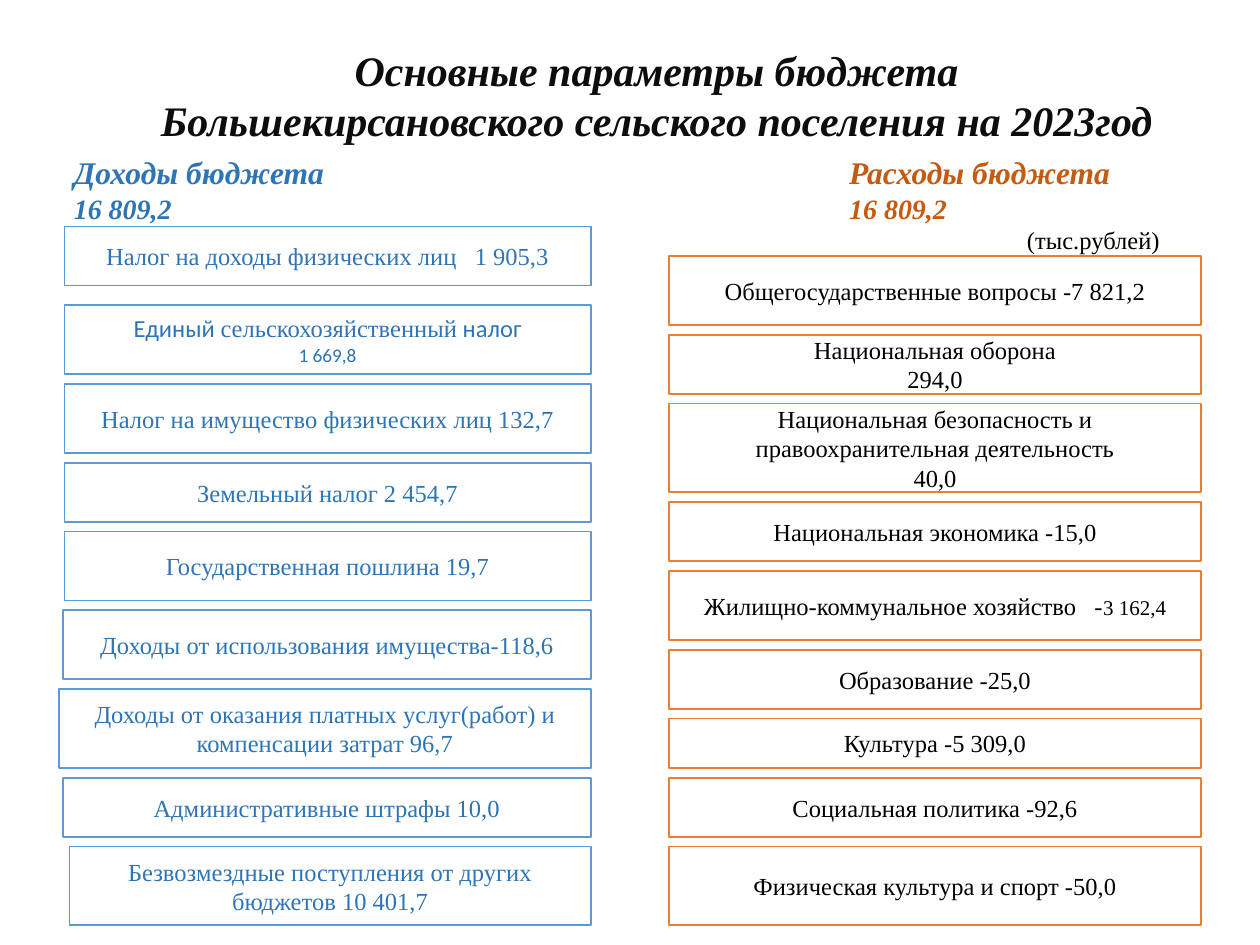
"""Build the 2023 budget slide: income boxes on the left, spending boxes on the right."""
import pptx
import pptx.dml.color
import pptx.enum.shapes
import pptx.enum.text
import pptx.util

Cm = pptx.util.Cm
Align = pptx.enum.text.PP_ALIGN
tint = {"ink": "0D0D0D", "black": "000000", "white": "FFFFFF",
        "blue": "2E75B6", "sky": "5B9BD5", "rust": "C55A11", "orange": "ED7D31"}
plain = {"name": "Times New Roman", "size": 14, "bold": False, "italic": False}
strong = {**plain, "bold": True, "italic": True}
sans = {"name": "Calibri"}


def rgb(key):
    return pptx.dml.color.RGBColor.from_string(tint[key])


def write(frame, lines, align, base, color):
    for index, line in enumerate(lines):
        para = frame.paragraphs[0] if index == 0 else frame.add_paragraph()
        para.alignment = align
        for text, extra in [(line, {})] if isinstance(line, str) else line:
            run = para.add_run()
            run.text = text
            run.font.color.rgb = rgb(color)
            for key, value in {**base, **extra}.items():
                setattr(run.font, key, pptx.util.Pt(value) if key == "size" else value)


deck = pptx.Presentation()
deck.slide_width, deck.slide_height = Cm(25.4), Cm(19.05)
unit = deck.slide_height / 96
slide = deck.slides.add_slide(deck.slide_layouts[5])

title = slide.shapes.title
title.left, title.top, title.width, title.height = Cm(2.46), Cm(0.76), Cm(21.13), Cm(2.31)
frame = title.text_frame
frame.word_wrap = True
frame.auto_size = pptx.enum.text.MSO_AUTO_SIZE.NONE
frame.vertical_anchor = pptx.enum.text.MSO_ANCHOR.TOP
write(frame, ["Основные параметры бюджета",
              "Большекирсановского сельского поселения на 2023год"],
      Align.CENTER, {**strong, "size": 24}, "ink")
frame.paragraphs[0]._p.get_or_add_pPr().set("marL", str(Cm(0.42)))

heads = [
    (1.24, 6.5, 1.7, "blue", "Доходы бюджета"),
    (16.87, 6.76, 2.31, "rust", "Расходы бюджета"),
]
for left, width, height, color, name in heads:
    box = slide.shapes.add_textbox(Cm(left), Cm(2.97), Cm(width), Cm(height))
    frame = box.text_frame
    frame.word_wrap = True
    write(frame, [name, [("16 809,2", {"size": 16})]],
          Align.LEFT, {**strong, "size": 18}, color)
note = frame.add_paragraph()
note.alignment = Align.RIGHT
run = note.add_run()
run.text = "(тыс.рублей)"
run.font.color.rgb = rgb("black")
for key, value in {**plain, "size": pptx.util.Pt(14)}.items():
    setattr(run.font, key, value)

income = [
    (1.3, 23, 6, ["Налог на доходы физических лиц   1 905,3"]),
    (1.3, 31, 7, [[("Единый ", sans), ("сельскохозяйственный", {}), (" налог", sans)],
                  [("1 669,8", {**sans, "size": 11})]]),
    (1.3, 39, 7, ["Налог на имущество физических лиц 132,7"]),
    (1.3, 47, 6, ["Земельный налог 2 454,7"]),
    (1.3, 54, 7, ["Государственная пошлина 19,7"]),
    (1.27, 62, 7, ["Доходы от использования имущества-118,6"]),
    (1.19, 70, 8, ["Доходы от оказания платных услуг(работ) и компенсации затрат 96,7"]),
    (1.27, 79, 6, ["Административные штрафы 10,0"]),
    (1.4, 86, 8, ["Безвозмездные поступления от других бюджетов 10 401,7"]),
]
spend = [
    (13.49, 26, 7, ["Общегосударственные вопросы -7 821,2"]),
    (13.49, 34, 6, ["Национальная оборона", "294,0"]),
    (13.49, 41, 9, ["Национальная безопасность и правоохранительная деятельность", "40,0"]),
    (13.49, 51, 6, ["Национальная экономика -15,0"]),
    (13.49, 58, 7, [[("Жилищно-коммунальное хозяйство   -", {}), ("3 162,4", {"size": 12})]]),
    (13.49, 66, 6, ["Образование -25,0"]),
    (13.49, 73, 5, ["Культура -5 309,0"]),
    (13.49, 79, 6, ["Социальная политика -92,6"]),
    (13.49, 86, 8, ["Физическая культура и спорт -50,0"]),
]
for rows, right, edge, color in [(income, 11.91, "sky", "blue"), (spend, 24.21, "orange", "black")]:
    for left, top, height, lines in rows:
        box = slide.shapes.add_shape(
            pptx.enum.shapes.MSO_SHAPE.RECTANGLE,
            Cm(left), round(top * unit), Cm(right - left), round(height * unit))
        box.shadow.inherit = False
        box.fill.solid()
        box.fill.fore_color.rgb = rgb("white")
        box.line.color.rgb = rgb(edge)
        box.line.width = pptx.util.Pt(1)
        box.text_frame.vertical_anchor = pptx.enum.text.MSO_ANCHOR.MIDDLE
        write(box.text_frame, lines, Align.CENTER, plain, color)

deck.save("out.pptx")
